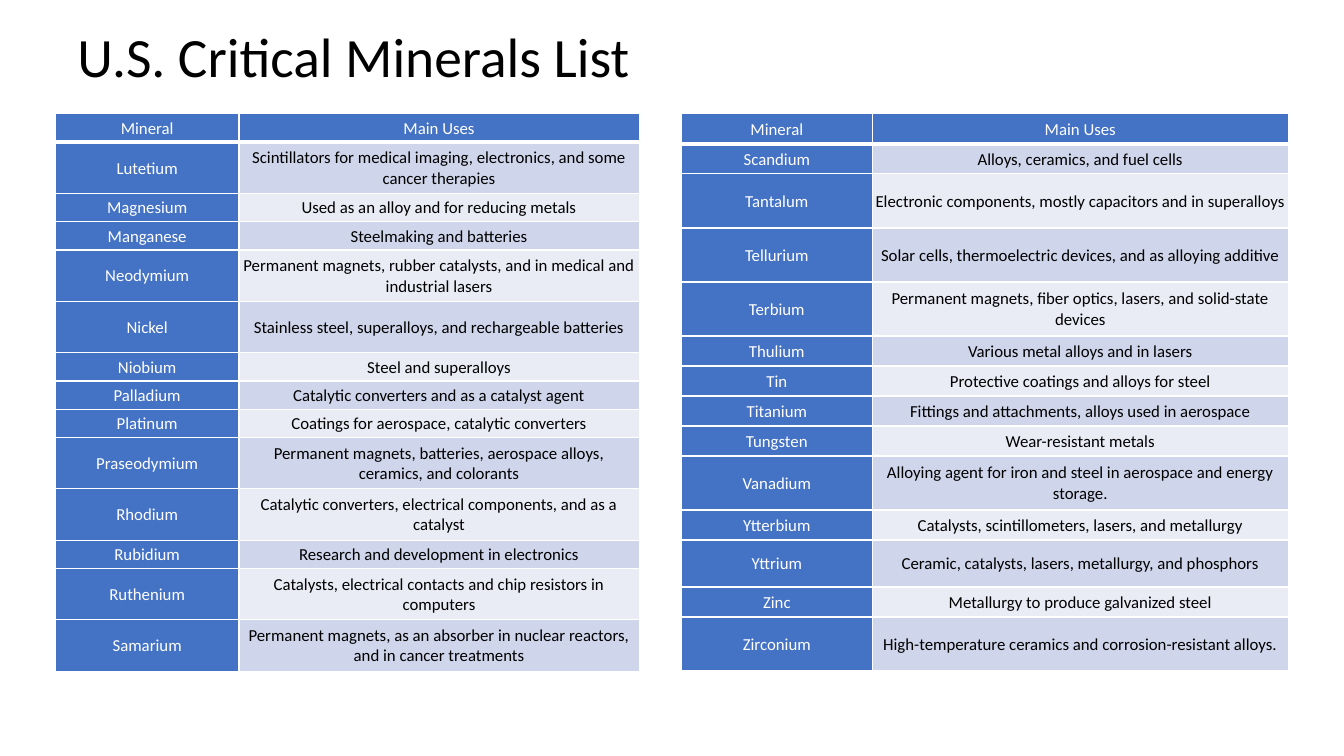
from pptx import Presentation
from pptx.dml.color import RGBColor
from pptx.enum.text import MSO_ANCHOR as Anchor, PP_ALIGN as Align
from pptx.oxml import parse_xml
from pptx.oxml.ns import nsdecls
from pptx.util import Inches, Pt

WHITE = RGBColor(0xFF, 0xFF, 0xFF)
BLACK = RGBColor(0x00, 0x00, 0x00)
BLUE = RGBColor(0x44, 0x72, 0xC4)
BANDS = [RGBColor(0xCF, 0xD5, 0xEA), RGBColor(0xE9, 0xEB, 0xF5)]

HEAD = ("Mineral", "Main Uses")
TOP, HEIGHT = 1.13, 5.53
CELL = {
    "margin_left": Inches(0.01),
    "margin_top": Inches(0.01),
    "margin_right": Inches(0.01),
    "margin_bottom": Inches(0),
    "vertical_anchor": Anchor.MIDDLE,
}

# Each row: mineral, main uses, row height
LEFT = [
    (*HEAD, 0.28),
    ("Lutetium", "Scintillators for medical imaging, electronics, and some cancer therapies", 0.51),
    ("Magnesium", "Used as an alloy and for reducing metals", 0.28),
    ("Manganese", "Steelmaking and batteries", 0.28),
    ("Neodymium", "Permanent magnets, rubber catalysts, and in medical and industrial lasers", 0.51),
    ("Nickel", "Stainless steel, superalloys, and rechargeable batteries", 0.51),
    ("Niobium", "Steel and superalloys", 0.28),
    ("Palladium", "Catalytic converters and as a catalyst agent", 0.28),
    ("Platinum", "Coatings for aerospace, catalytic converters", 0.28),
    ("Praseodymium", "Permanent magnets, batteries, aerospace alloys, ceramics, and colorants", 0.51),
    ("Rhodium", "Catalytic converters, electrical components, and as a catalyst", 0.51),
    ("Rubidium", "Research and development in electronics", 0.28),
    ("Ruthenium", "Catalysts, electrical contacts and chip resistors in computers", 0.51),
    ("Samarium", "Permanent magnets, as an absorber in nuclear reactors, and in cancer treatments", 0.51),
]
RIGHT = [
    (*HEAD, 0.3),
    ("Scandium", "Alloys, ceramics, and fuel cells", 0.3),
    ("Tantalum", "Electronic components, mostly capacitors and in superalloys", 0.54),
    ("Tellurium", "Solar cells, thermoelectric devices, and as alloying additive", 0.54),
    ("Terbium", "Permanent magnets, fiber optics, lasers, and solid-state devices", 0.54),
    ("Thulium", "Various metal alloys and in lasers", 0.3),
    ("Tin", "Protective coatings and alloys for steel", 0.3),
    ("Titanium", "Fittings and attachments, alloys used in aerospace", 0.3),
    ("Tungsten", "Wear-resistant metals", 0.3),
    ("Vanadium", "Alloying agent for iron and steel in aerospace and energy storage.", 0.54),
    ("Ytterbium", "Catalysts, scintillometers, lasers, and metallurgy", 0.3),
    ("Yttrium", "Ceramic, catalysts, lasers, metallurgy, and phosphors", 0.47),
    ("Zinc", "Metallurgy to produce galvanized steel", 0.3),
    ("Zirconium", "High-temperature ceramics and corrosion-resistant alloys.", 0.54),
]


def put(item, values):
    """Set each attribute of item named in values."""
    for name, value in values.items():
        setattr(item, name, value)


def write(para, text, size, color):
    run = para.add_run()
    run.text = text
    put(run.font, {"name": "Calibri", "size": Pt(size), "bold": False})
    run.font.color.rgb = color


def add_title(slide, text):
    box = slide.shapes.add_textbox(Inches(0.67), Inches(0.24), Inches(11.75), Inches(0.7))
    put(box.text_frame, {"word_wrap": True, "vertical_anchor": Anchor.MIDDLE})
    para = box.text_frame.paragraphs[0]
    para.line_spacing = 0.9
    write(para, text, 39.6, BLACK)


def add_rules(cell):
    """Give a header cell white borders, with a heavy one below."""
    props = cell._tc.get_or_add_tcPr()
    for side, width in {"L": 1, "R": 1, "T": 1, "B": 3}.items():
        props.append(parse_xml(
            f'<a:ln{side} {nsdecls("a")} w="{Pt(width)}">'
            f'<a:solidFill><a:srgbClr val="{WHITE}"/></a:solidFill></a:ln{side}>'
        ))


def fill_cell(cell, text, fill, color):
    put(cell, CELL)
    cell.fill.solid()
    cell.fill.fore_color.rgb = fill
    para = cell.text_frame.paragraphs[0]
    para.alignment = Align.CENTER
    write(para, text, 12, color)


def add_minerals(slide, left, widths, rows):
    frame = slide.shapes.add_table(
        len(rows), len(widths), Inches(left), Inches(TOP), Inches(sum(widths)), Inches(HEIGHT)
    )
    table = frame.table
    for col, width in zip(table.columns, widths):
        col.width = Inches(width)
    scale = HEIGHT / sum(row[-1] for row in rows)
    for r, (*texts, height) in enumerate(rows):
        table.rows[r].height = Inches(height * scale)
        for c, text in enumerate(texts):
            cell = table.cell(r, c)
            if r == 0:
                add_rules(cell)
            if r == 0 or c == 0:
                fill_cell(cell, text, BLUE, WHITE)
            else:
                fill_cell(cell, text, BANDS[(r - 1) % 2], BLACK)


def main():
    deck = Presentation()
    put(deck, {"slide_width": Inches(13.33), "slide_height": Inches(7.5)})
    slide = deck.slides.add_slide(deck.slide_layouts[6])
    add_title(slide, "U.S. Critical Minerals List")
    add_minerals(slide, 0.55, (1.82, 3.97), LEFT)
    add_minerals(slide, 6.76, (1.89, 4.13), RIGHT)
    deck.save("out.pptx")


if __name__ == "__main__":
    main()
